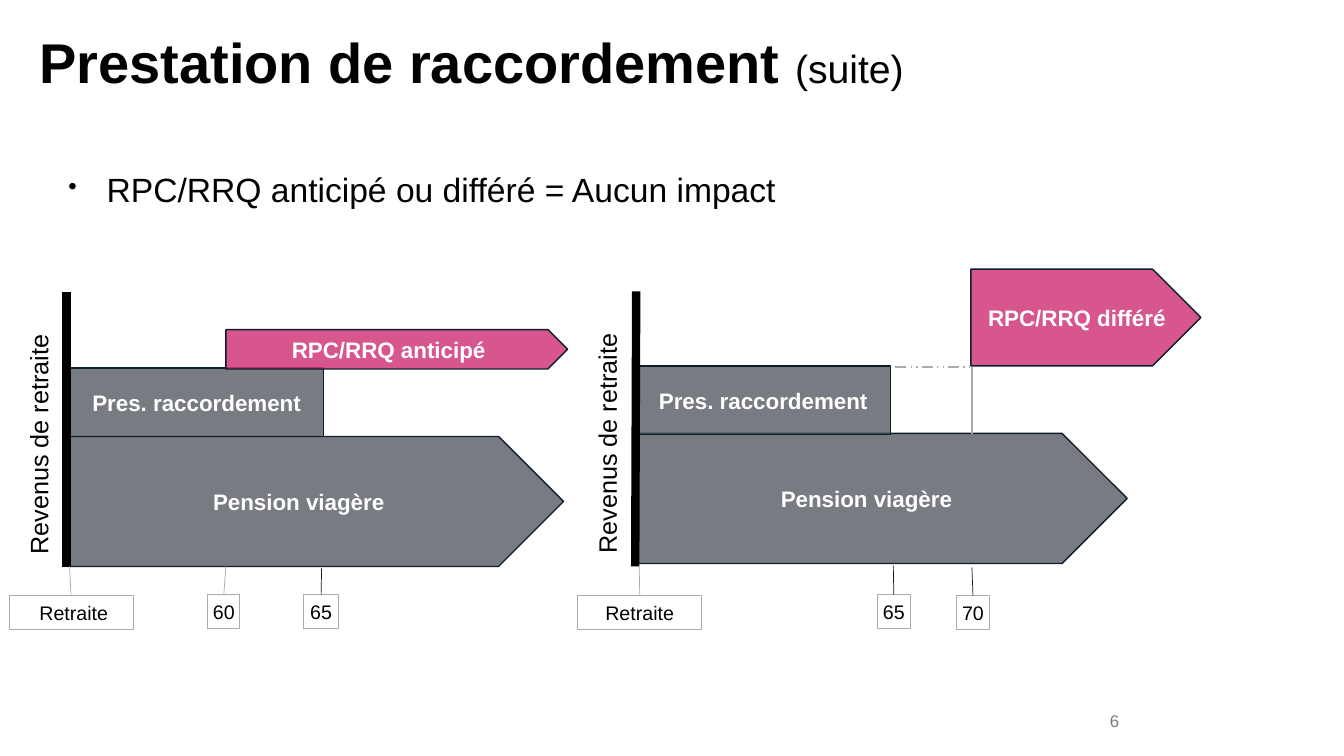
from lxml import etree
from pptx import Presentation
from pptx.dml.color import RGBColor
from pptx.enum.dml import MSO_LINE
from pptx.enum.shapes import MSO_CONNECTOR, MSO_SHAPE
from pptx.enum.text import MSO_ANCHOR, PP_ALIGN
from pptx.oxml.ns import qn
from pptx.util import Inches, Pt

RECT, ARROW = MSO_SHAPE.RECTANGLE, MSO_SHAPE.PENTAGON
LINE, DASH = MSO_CONNECTOR.STRAIGHT, MSO_LINE.DASH_DOT_DOT
TOP, MIDDLE = MSO_ANCHOR.TOP, MSO_ANCHOR.MIDDLE
LEFT, CENTER, RIGHT = PP_ALIGN.LEFT, PP_ALIGN.CENTER, PP_ALIGN.RIGHT
COLORS = {"ink": "020202", "black": "000000", "white": "FFFFFF", "gray": "4B4F59",
          "pink": "D1397A", "navy": "0C1E2B", "sand": "B0AAA2", "page": "797B7D"}
RGB = {name: RGBColor.from_string(code) for name, code in COLORS.items()}

prs = Presentation()
prs.slide_width, prs.slide_height = Inches(13.33), Inches(7.5)
slide = prs.slides.add_slide(prs.slide_layouts[5])
shapes = slide.shapes


def write(shape, text, size, color, bold=False, align=LEFT, anchor=TOP, pad=0.1):
    frame = shape.text_frame
    frame.word_wrap = True
    frame.vertical_anchor = anchor
    frame.margin_left = frame.margin_right = Inches(pad)
    frame.margin_top = frame.margin_bottom = Inches(0.05)
    para = frame.paragraphs[0]
    para.text = text
    para.alignment = align
    font = para.font
    font.name, font.size, font.bold = "Arial", Pt(size), bold
    font.color.rgb = RGB[color]
    return para


def draw(x1, y1, x2, y2, color, width):
    line = shapes.add_connector(LINE, Inches(x1), Inches(y1), Inches(x2), Inches(y2))
    line.line.color.rgb = RGB[color]
    line.line.width = Pt(width)
    etree.SubElement(line._element.spPr, qn("a:effectLst"))
    return line


title = shapes.title
title.left, title.top = Inches(0.39), Inches(0.35)
title.width, title.height = Inches(11.11), Inches(0.85)
head = write(title, "Prestation de raccordement ", 40, "ink", True, pad=0)
title.text_frame.margin_top = title.text_frame.margin_bottom = 0
head.line_spacing = 0.9
tail = head.add_run()
tail.text = "(suite)"
tail.font.size, tail.font.bold = Pt(28), False

box = shapes.add_textbox(Inches(0.58), Inches(1.63), Inches(12), Inches(0.81))
point = box.text_frame.paragraphs[0]
props = point._p.get_or_add_pPr()
props.set("marL", str(Inches(0.38)))
props.set("indent", str(-Inches(0.38)))
etree.SubElement(props, qn("a:buSzPct")).set("val", "75000")
etree.SubElement(props, qn("a:buChar")).set("char", "•")
write(box, "RPC/RRQ anticipé ou différé = Aucun impact", 24, "ink")

for x, y in [(-0.89, 4.13), (4.75, 4.12)]:
    label = shapes.add_textbox(Inches(x), Inches(y), Inches(2.54), Inches(0.4))
    label.rotation = 270
    write(label, "Revenus de retraite", 18, "ink")

bars = [
    (ARROW, 0.66, 4.33, 4.93, 1.29, "gray", 75, 0.1, "Pension viagère"),
    (RECT, 0.69, 3.65, 2.52, 0.68, "gray", 75, 0.1, "Pres. raccordement"),
    (ARROW, 2.24, 3.27, 3.39, 0.39, "pink", 85, 0, "RPC/RRQ anticipé "),
    (ARROW, 6.33, 4.3, 4.85, 1.29, "gray", 75, 0.1, "Pension viagère"),
    (RECT, 6.31, 3.63, 2.52, 0.68, "gray", 75, 0.1, "Pres. raccordement"),
    (ARROW, 9.63, 2.67, 2.28, 0.96, "pink", 85, 0, " RPC/RRQ différé"),
]
for kind, x, y, w, h, color, alpha, pad, text in bars:
    bar = shapes.add_shape(kind, Inches(x), Inches(y), Inches(w), Inches(h))
    bar.shadow.inherit = False
    bar.fill.solid()
    bar.fill.fore_color.rgb = RGB[color]
    shade = bar._element.spPr.find(qn("a:solidFill"))[0]
    etree.SubElement(shade, qn("a:alpha")).set("val", str(alpha * 1000))
    bar.line.color.rgb = RGB["navy"]
    bar.line.width = Pt(1)
    write(bar, text, 16, "white", True, CENTER, MIDDLE, pad)

draw(0.66, 2.9, 0.66, 5.63, "black", 6)
draw(6.31, 2.89, 6.3, 5.62, "black", 6)
draw(8.88, 3.64, 9.65, 3.64, "sand", 1).line.dash_style = DASH
draw(9.64, 3.64, 9.64, 4.31, "sand", 1)

tags = [
    (" Retraite", 0.09, 5.91, 1.23, 0.1, 0.69, 5.62, "sand"),
    ("60", 2.06, 5.9, 0.32, 0.05, 2.24, 5.62, "sand"),
    ("65", 3.01, 5.9, 0.35, 0.05, 3.19, 5.64, "navy"),
    ("Retraite", 5.73, 5.91, 1.23, 0.1, 6.34, 5.61, "sand"),
    ("65", 8.7, 5.9, 0.33, 0.05, 8.86, 5.61, "navy"),
    ("70", 9.49, 5.91, 0.32, 0.05, 9.64, 5.63, "navy"),
]
for text, x, y, w, pad, start, top, color in tags:
    tag = shapes.add_shape(RECT, Inches(x), Inches(y), Inches(w), Inches(0.34))
    tag.shadow.inherit = False
    tag.fill.background()
    tag.line.color.rgb = RGB["sand"]
    tag.line.width = Pt(0.75)
    write(tag, text, 14, "black", align=CENTER, pad=pad)
    draw(start, top, start, y, color, 0.5).end_connect(tag, 0)

page = shapes.add_textbox(Inches(9.63), Inches(6.95), Inches(1.57), Inches(0.4))
write(page, "6", 12, "page", align=RIGHT, anchor=MIDDLE)

prs.save("out.pptx")
